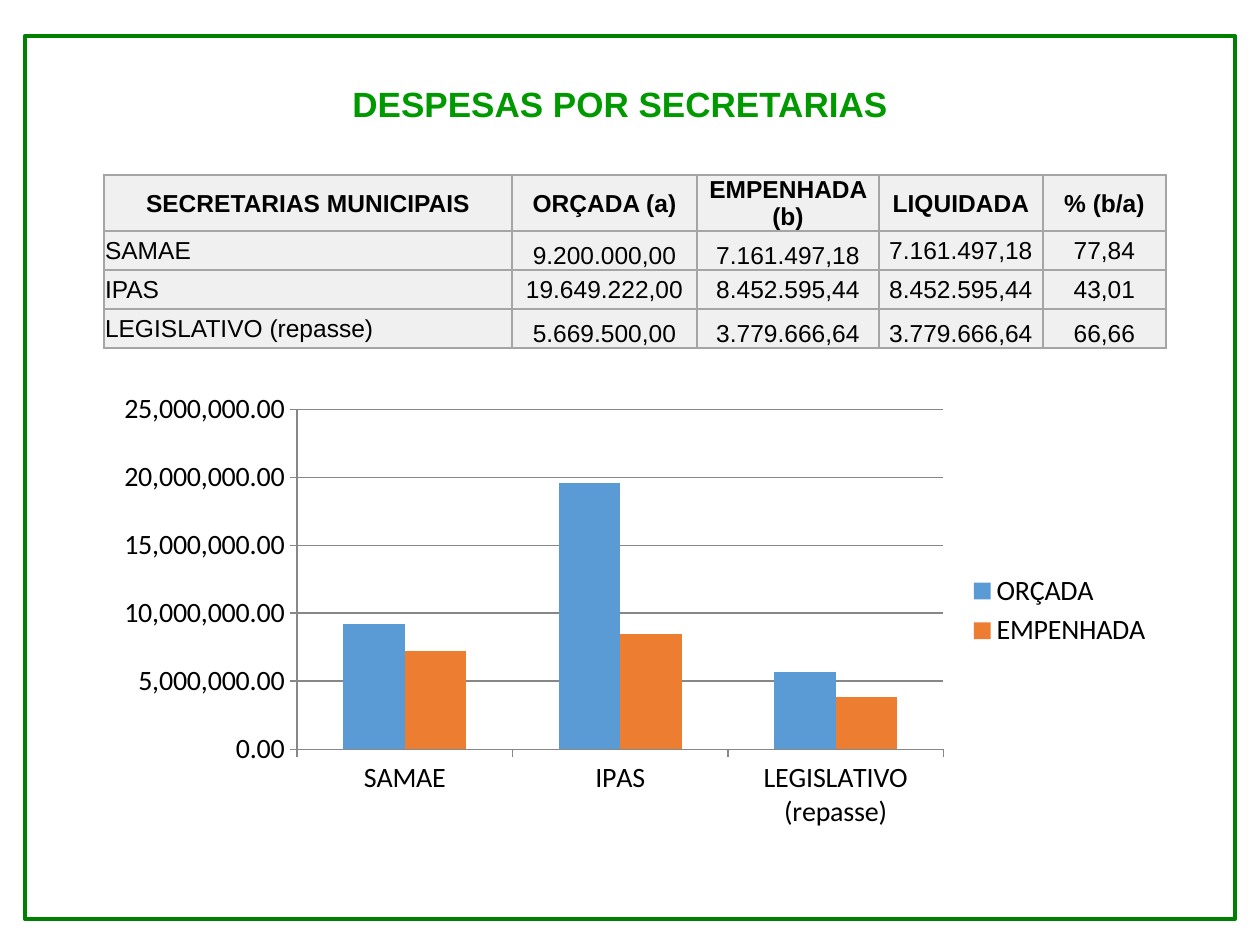
from lxml.etree import SubElement
from pptx import Presentation
from pptx.chart.data import CategoryChartData
from pptx.dml.color import RGBColor
from pptx.enum.chart import XL_CHART_TYPE, XL_LEGEND_POSITION, XL_TICK_MARK
from pptx.enum.shapes import MSO_SHAPE
from pptx.enum.text import MSO_ANCHOR, PP_ALIGN
from pptx.oxml.ns import qn
from pptx.util import Emu, Inches, Pt

PX_PER_INCH = 126
GRID_GRAY = "A5A5A5"
AXIS_GRAY = "878787"

HEADERS = ["SECRETARIAS MUNICIPAIS", "ORÇADA (a)", "EMPENHADA (b)", "LIQUIDADA", "% (b/a)"]
EXPENSES = [
    ["SAMAE", "9.200.000,00", "7.161.497,18", "7.161.497,18", "77,84"],
    ["IPAS", "19.649.222,00", "8.452.595,44", "8.452.595,44", "43,01"],
    ["LEGISLATIVO (repasse)", "5.669.500,00", "3.779.666,64", "3.779.666,64", "66,66"],
]
# One letter per cell: m = middle, b = bottom
ANCHOR_ROWS = ["mmmmm", "mbbmm", "mmmmm", "mbbbb"]
ANCHORS = {"m": MSO_ANCHOR.MIDDLE, "b": MSO_ANCHOR.BOTTOM}
COLUMN_WIDTHS = [408, 185, 182, 164, 123]
ROW_HEIGHTS = [56, 39, 39, 39]

CHART_SERIES = [
    ("ORÇADA", [9200000, 19600000, 5700000], "5B9BD5"),
    ("EMPENHADA", [7200000, 8500000, 3800000], "ED7D31"),
]


def px(length):
    return Emu(round(length * Inches(1) / PX_PER_INCH))


def color(hex_code):
    return RGBColor.from_string(hex_code)


def style_font(font, name, size, hex_code, bold=False):
    font.name = name
    font.size = Pt(size)
    font.bold = bold
    font.color.rgb = color(hex_code)


def write(paragraph, text, size, hex_code, bold, align):
    paragraph.alignment = align
    run = paragraph.add_run()
    run.text = text
    style_font(run.font, "Arial", size, hex_code, bold)


def add_frame(slide):
    frame = slide.shapes.add_shape(MSO_SHAPE.RECTANGLE, px(25), px(36), px(1210), px(883))
    frame.shadow.inherit = False
    frame.fill.background()
    frame.line.color.rgb = color("008000")
    frame.line.width = Pt(2.5)


def set_title(slide, text):
    title = slide.shapes.title
    title.left, title.top, title.width, title.height = px(263), px(76), px(714), px(55)
    title.text_frame.vertical_anchor = MSO_ANCHOR.MIDDLE
    write(title.text_frame.paragraphs[0], text, 20, "009900", True, PP_ALIGN.CENTER)


def outline_cell(cell):
    properties = cell._tc.get_or_add_tcPr()
    for side in ("lnL", "lnR", "lnT", "lnB"):
        line = SubElement(properties, qn(f"a:{side}"), w=str(Pt(1)))
        fill = SubElement(line, qn("a:solidFill"))
        SubElement(fill, qn("a:srgbClr"), val=GRID_GRAY)


def fill_cell(cell, text, anchor, bold, align):
    cell.margin_left = cell.margin_right = cell.margin_top = px(1)
    cell.margin_bottom = 0
    cell.vertical_anchor = anchor
    outline_cell(cell)
    cell.fill.solid()
    cell.fill.fore_color.rgb = color("F0F0F0")
    write(cell.text_frame.paragraphs[0], text, 14, "000000", bold, align)


def add_expense_table(slide):
    rows = [HEADERS] + EXPENSES
    table = slide.shapes.add_table(
        len(rows), len(HEADERS), px(104), px(175),
        px(sum(COLUMN_WIDTHS)), px(sum(ROW_HEIGHTS))).table
    for column, width in zip(table.columns, COLUMN_WIDTHS):
        column.width = px(width)
    for row, height in zip(table.rows, ROW_HEIGHTS):
        row.height = px(height)
    for r, (texts, anchors) in enumerate(zip(rows, ANCHOR_ROWS)):
        for c, (text, anchor) in enumerate(zip(texts, anchors)):
            is_header = r == 0
            align = PP_ALIGN.CENTER if is_header or c else PP_ALIGN.LEFT
            fill_cell(table.cell(r, c), text, ANCHORS[anchor], is_header, align)


def style_axis(axis):
    axis.major_tick_mark = XL_TICK_MARK.OUTSIDE
    axis.minor_tick_mark = XL_TICK_MARK.NONE
    axis.format.line.color.rgb = color(AXIS_GRAY)


def add_expense_chart(slide):
    data = CategoryChartData(number_format="#,##0.00")
    data.categories = [row[0] for row in EXPENSES]
    for name, values, _ in CHART_SERIES:
        data.add_series(name, values)
    chart = slide.shapes.add_chart(
        XL_CHART_TYPE.COLUMN_CLUSTERED, px(103), px(383), px(1062), px(456), data).chart
    style_font(chart.font, "Calibri", 16, "000000")
    chart.has_title = False
    chart.has_legend = True
    chart.legend.position = XL_LEGEND_POSITION.RIGHT
    chart.legend.include_in_layout = False

    style_axis(chart.category_axis)
    style_axis(chart.value_axis)
    chart.value_axis.tick_labels.number_format = "#,##0.00"
    chart.value_axis.tick_labels.number_format_is_linked = False
    chart.value_axis.major_gridlines.format.line.color.rgb = color(AXIS_GRAY)

    plot = chart.plots[0]
    plot.gap_width = 150
    plot.overlap = 0
    plot.vary_by_categories = False
    for series, (_, _, hex_code) in zip(plot.series, CHART_SERIES):
        series.format.fill.solid()
        series.format.fill.fore_color.rgb = color(hex_code)


def main():
    presentation = Presentation()
    presentation.slide_width, presentation.slide_height = Inches(10), Inches(7.5)
    title_only = presentation.slide_layouts[5]
    slide = presentation.slides.add_slide(title_only)
    set_title(slide, "DESPESAS POR SECRETARIAS")
    add_expense_table(slide)
    add_frame(slide)
    add_expense_chart(slide)
    presentation.save("out.pptx")


if __name__ == "__main__":
    main()
